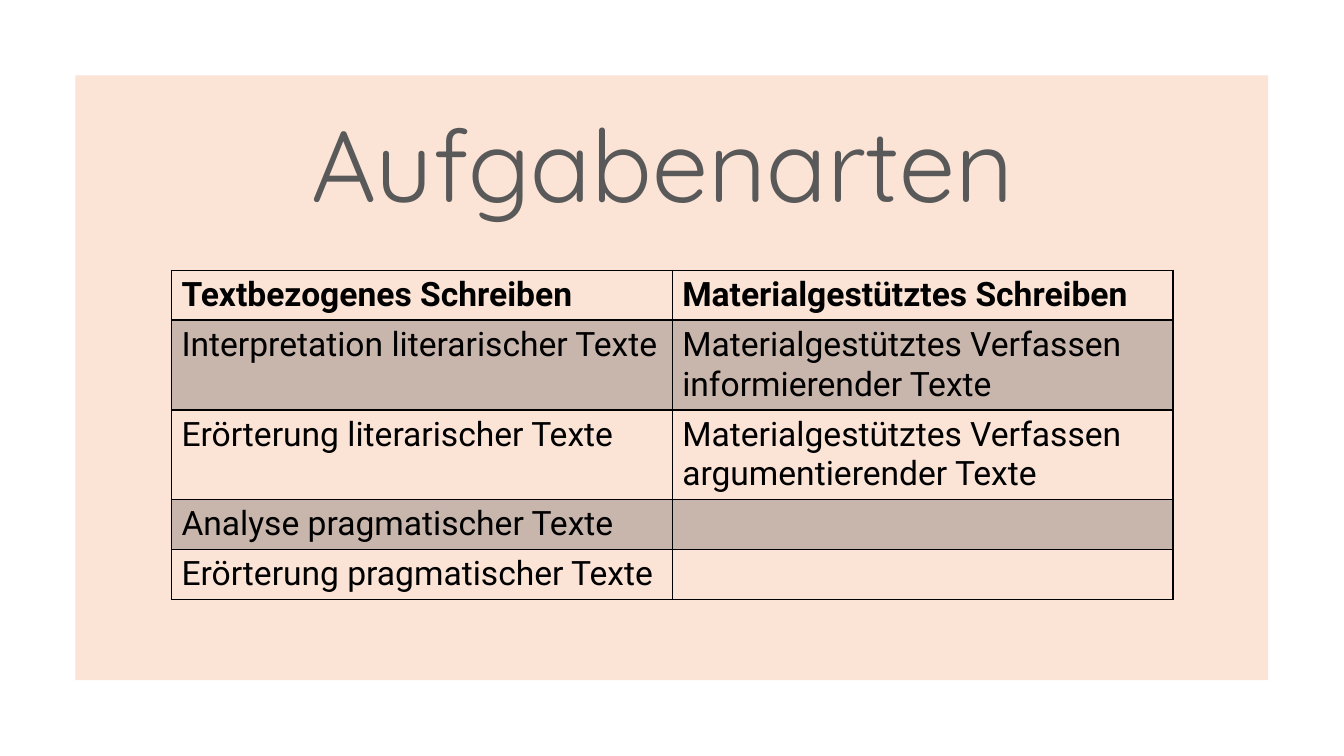
from lxml.etree import SubElement
from pptx import Presentation
from pptx.dml.color import RGBColor
from pptx.enum.shapes import MSO_SHAPE
from pptx.enum.text import MSO_ANCHOR, PP_ALIGN
from pptx.oxml import parse_xml
from pptx.oxml.ns import nsdecls, qn
from pptx.util import Cm, Pt

PEACH = RGBColor(0xFB, 0xE3, 0xD6)
GRAY = RGBColor(0x59, 0x59, 0x59)
BLACK = RGBColor(0x00, 0x00, 0x00)

TITLE_FONT = {"name": "Quicksand", "size": Pt(72), "bold": False}
CELL_FONT = {"name": "Roboto", "size": Pt(24)}
ROWS = [
    ("Textbezogenes Schreiben", "Materialgestütztes Schreiben"),
    ("Interpretation literarischer Texte",
     "Materialgestütztes Verfassen informierender Texte"),
    ("Erörterung literarischer Texte",
     "Materialgestütztes Verfassen argumentierender Texte"),
    ("Analyse pragmatischer Texte", ""),
    ("Erörterung pragmatischer Texte", ""),
]
ROW_HEIGHTS = [1.26, 2.26, 2.26, 1.26, 1.26]


def add_run(p, text, font, color):
    r = p.add_run()
    r.text = text
    for name, value in font.items():
        setattr(r.font, name, value)
    r.font.color.rgb = color


def add_panel(s):
    sp = s.shapes.add_shape(MSO_SHAPE.RECTANGLE, Cm(1.9), Cm(1.9), Cm(30.06), Cm(15.24))
    sp.shadow.inherit = False
    sp.fill.solid()
    sp.fill.fore_color.rgb = PEACH
    sp.line.fill.background()
    s.shapes.title.element.addprevious(sp.element)


def format_title(s, text):
    sp = s.shapes.title
    place = {"left": 1.45, "top": 2.72, "width": 30.5, "height": 3.12}
    for name, value in place.items():
        setattr(sp, name, Cm(value))
    tf = sp.text_frame
    tf.word_wrap = True
    tf.vertical_anchor = MSO_ANCHOR.MIDDLE
    p = tf.paragraphs[0]
    p.alignment = PP_ALIGN.CENTER
    p.line_spacing = 0.9
    add_run(p, text, TITLE_FONT, GRAY)


def set_borders(cell, widths):
    tcPr = cell._tc.get_or_add_tcPr()
    for i, (side, width) in enumerate(widths.items()):
        tcPr.insert(i, parse_xml(
            f'<a:ln{side} {nsdecls("a")} w="{Pt(width)}"><a:solidFill>'
            f'<a:srgbClr val="{BLACK}"/></a:solidFill></a:ln{side}>'))


def fill_cell(cell, shaded):
    if not shaded:
        cell.fill.background()
        return
    cell.fill.solid()
    cell.fill.fore_color.rgb = BLACK
    color = cell._tc.tcPr.find(qn("a:solidFill"))[0]
    SubElement(color, qn("a:alpha")).set("val", "20000")


def add_task_table(s):
    table = s.shapes.add_table(len(ROWS), 2, Cm(4.32), Cm(6.81),
                               Cm(25.24), Cm(sum(ROW_HEIGHTS))).table
    table.first_row = table.horz_banding = False
    for i, (texts, height) in enumerate(zip(ROWS, ROW_HEIGHTS)):
        table.rows[i].height = Cm(height)
        for j, text in enumerate(texts):
            cell = table.cell(i, j)
            fill_cell(cell, i % 2 == 1)
            set_borders(cell, {"L": 1, "R": 1, "T": 2 if i == 1 else 1,
                               "B": 2 if i == 0 else 1})
            if text:
                add_run(cell.text_frame.paragraphs[0], text,
                        CELL_FONT | {"bold": i == 0}, BLACK)


def main():
    prs = Presentation()
    prs.slide_width, prs.slide_height = Cm(33.87), Cm(19.05)
    s = prs.slides.add_slide(prs.slide_layouts[5])
    add_panel(s)
    format_title(s, "Aufgabenarten")
    add_task_table(s)
    prs.save("out.pptx")


if __name__ == "__main__":
    main()
